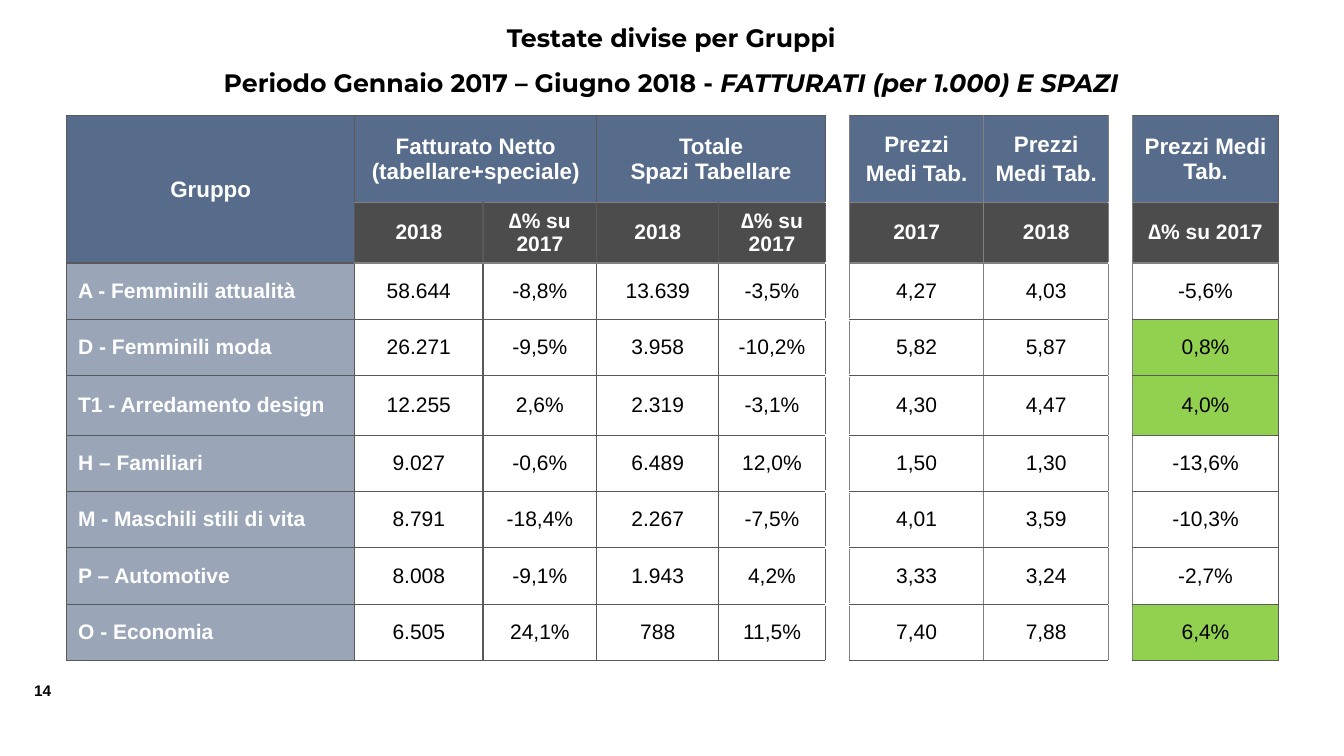
from dataclasses import dataclass

from pptx import Presentation
from pptx.dml.color import RGBColor
from pptx.enum import text
from pptx.oxml import ns
from pptx.util import Cm, Pt
from lxml import etree

# Content
TITLE = [
    [("Testate divise per Gruppi", False)],
    [("Periodo Gennaio 2017 – Giugno 2018 - ", False),
     ("FATTURATI (per 1.000) E SPAZI", True)],
]
PAGE_NUMBER = "14"
DELTA = "∆% su 2017"
GROUP_HEADERS = {  # column: lines
    0: ["Gruppo"],
    1: ["Fatturato Netto (tabellare+speciale)"],
    3: ["Totale", "Spazi Tabellare"],
    6: ["Prezzi", "Medi Tab."],
    7: ["Prezzi", "Medi Tab."],
    9: ["Prezzi Medi Tab."],
}
SPACED_HEADERS = (6, 7)
YEAR_HEADERS = {1: "2018", 2: DELTA, 3: "2018", 4: DELTA, 6: "2017", 7: "2018", 9: DELTA}
DATA_COLUMNS = (0, 1, 2, 3, 4, 6, 7, 9)
DATA = [
    ("A - Femminili attualità", "58.644", "-8,8%", "13.639", "-3,5%", "4,27", "4,03", "-5,6%"),
    ("D - Femminili moda", "26.271", "-9,5%", "3.958", "-10,2%", "5,82", "5,87", "0,8%"),
    ("T1 - Arredamento design", "12.255", "2,6%", "2.319", "-3,1%", "4,30", "4,47", "4,0%"),
    ("H – Familiari", "9.027", "-0,6%", "6.489", "12,0%", "1,50", "1,30", "-13,6%"),
    ("M - Maschili stili di vita", "8.791", "-18,4%", "2.267", "-7,5%", "4,01", "3,59", "-10,3%"),
    ("P – Automotive", "8.008", "-9,1%", "1.943", "4,2%", "3,33", "3,24", "-2,7%"),
    ("O - Economia", "6.505", "24,1%", "788", "11,5%", "7,40", "7,88", "6,4%"),
]
COLUMN_WIDTHS = [7.26, 3.23, 2.87, 3.07, 2.69, 0.61, 3.38, 3.15, 0.61, 3.66]
ROW_HEIGHTS = [2.18, 1.52, 1.42, 1.42, 1.5, 1.42, 1.42, 1.42, 1.42]
GAP_COLUMNS = (5, 8)
MERGES = [((0, 0), (1, 0)), ((0, 1), (0, 2)), ((0, 3), (0, 4))]


@dataclass(frozen=True)
class Theme:
    blue: str = "576B8A"
    black: str = "000000"
    white: str = "FFFFFF"
    green: str = "92D050"
    dark_line: str = "595959"
    grey_line: str = "808080"
    title_font: str = "Montserrat"
    body_font: str = "Arial"
    title_size: int = 18
    header_size: int = 16
    body_size: int = 15
    page_size: int = 11


THEME = Theme()


def style_font(paragraph, name, size, color, bold):
    font = paragraph.font
    font.name, font.size, font.bold = name, Pt(size), bold
    font.color.rgb = RGBColor.from_string(color)


def add_text_box(slide, left, top, width, height):
    frame = slide.shapes.add_textbox(Cm(left), Cm(top), Cm(width), Cm(height)).text_frame
    frame.word_wrap = True
    return frame


# Table edges: one colour and width per grid line
def vertical_edge(line):
    return (THEME.grey_line if 6 <= line <= 9 else THEME.dark_line), 1


def horizontal_edge(line, column):
    if column in GAP_COLUMNS:
        return THEME.white, 2.25 if column == 5 and 3 <= line <= 8 else 1
    return (THEME.grey_line if line in (1, 2) and column else THEME.dark_line), 1


def set_borders(cell, row, column):
    edges = {
        "lnL": vertical_edge(column),
        "lnR": vertical_edge(column + 1),
        "lnT": horizontal_edge(row, column),
        "lnB": horizontal_edge(row + 1, column),
    }
    properties = cell._tc.get_or_add_tcPr()
    for tag, (color, width) in edges.items():
        line = etree.SubElement(properties, ns.qn(f"a:{tag}"), w=str(Pt(width)))
        fill = etree.SubElement(line, ns.qn("a:solidFill"))
        etree.SubElement(fill, ns.qn("a:srgbClr"), val=color)


def set_fill(cell, color, opacity=100):
    if color is None:
        cell.fill.background()
        return
    cell.fill.solid()
    cell.fill.fore_color.rgb = RGBColor.from_string(color)
    if opacity < 100:
        tone = cell._tc.tcPr.find(ns.qn("a:solidFill"))[0]
        etree.SubElement(tone, ns.qn("a:alpha"), val=str(opacity * 1000))


def cell_fill(row, column, value):
    if column in GAP_COLUMNS:
        return THEME.white, 100
    if row == 0 or (row == 1 and column == 0):
        return THEME.blue, 100
    if row == 1:
        return THEME.black, 70
    if column == 0:
        return THEME.blue, 60
    rising = column == 9 and not value.startswith("-")
    return (THEME.green if rising else None), 100


def cell_lines(row, column):
    if row == 0:
        return GROUP_HEADERS.get(column, [])
    if row == 1:
        return [YEAR_HEADERS[column]] if column in YEAR_HEADERS else []
    if column in GAP_COLUMNS:
        return []
    return [DATA[row - 2][DATA_COLUMNS.index(column)]]


def write_cell(cell, row, column, lines):
    cell.vertical_anchor = text.MSO_ANCHOR.MIDDLE
    is_data, is_label = row > 1, row > 1 and column == 0
    if is_data:
        cell.margin_left = Cm(0.29 if is_label else 0)
        cell.margin_right = cell.margin_top = cell.margin_bottom = 0
    for index, line in enumerate(lines):
        frame = cell.text_frame
        paragraph = frame.add_paragraph() if index else frame.paragraphs[0]
        paragraph.text = line
        paragraph.alignment = text.PP_ALIGN.LEFT if is_label else text.PP_ALIGN.CENTER
        if index and column in SPACED_HEADERS:
            paragraph.space_before = Pt(3)
        is_bold = not is_data or is_label
        style_font(paragraph, THEME.body_font,
                   THEME.body_size if row else THEME.header_size,
                   THEME.white if is_bold else THEME.black, is_bold)


def add_title(slide):
    frame = add_text_box(slide, 2.82, 0.05, 28.19, 2.72)
    for index, runs in enumerate(TITLE):
        paragraph = frame.add_paragraph() if index else frame.paragraphs[0]
        paragraph.alignment = text.PP_ALIGN.CENTER
        paragraph.line_spacing = 1.5
        style_font(paragraph, THEME.title_font, THEME.title_size, THEME.black, True)
        for words, italic in runs:
            run = paragraph.add_run()
            run.text = words
            run.font.italic = italic


def add_group_table(slide):
    table = slide.shapes.add_table(
        len(ROW_HEIGHTS), len(COLUMN_WIDTHS), Cm(1.68), Cm(2.92),
        Cm(sum(COLUMN_WIDTHS)), Cm(sum(ROW_HEIGHTS))).table
    table.first_row = table.horz_banding = False
    for column, width in zip(table.columns, COLUMN_WIDTHS):
        column.width = Cm(width)
    for row, height in zip(table.rows, ROW_HEIGHTS):
        row.height = Cm(height)
    for start, end in MERGES:
        table.cell(*start).merge(table.cell(*end))
    for row in range(len(ROW_HEIGHTS)):
        for column in range(len(COLUMN_WIDTHS)):
            cell, lines = table.cell(row, column), cell_lines(row, column)
            set_borders(cell, row, column)
            set_fill(cell, *cell_fill(row, column, "".join(lines)))
            write_cell(cell, row, column, lines)


def add_page_number(slide):
    frame = add_text_box(slide, 0.61, 17.04, 1.07, 0.74)
    paragraph = frame.paragraphs[0]
    paragraph.text = PAGE_NUMBER
    style_font(paragraph, THEME.body_font, THEME.page_size, THEME.black, True)


def main():
    presentation = Presentation()
    presentation.slide_width, presentation.slide_height = Cm(33.87), Cm(19.05)
    slide = presentation.slides.add_slide(presentation.slide_layouts[6])
    add_page_number(slide)
    add_title(slide)
    add_group_table(slide)
    presentation.save("out.pptx")


if __name__ == "__main__":
    main()
